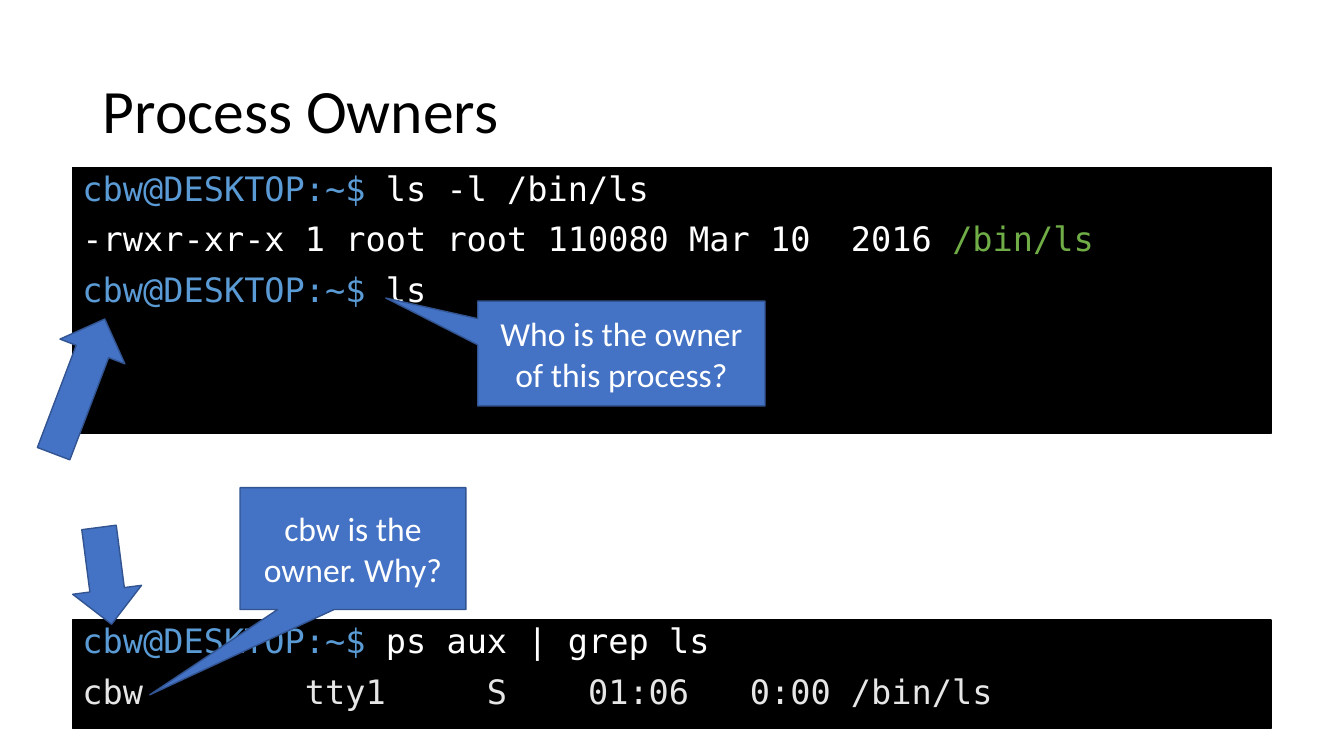
import pptx
import pptx.util
import pptx.dml.color
import pptx.enum.shapes
import pptx.enum.text

Cm = pptx.util.Cm
Pt = pptx.util.Pt
SHAPE = pptx.enum.shapes.MSO_SHAPE
ANCHOR = pptx.enum.text.MSO_ANCHOR
ALIGN = pptx.enum.text.PP_ALIGN

BLACK, WHITE, GREY = "000000", "FFFFFF", "E7E6E6"
PROMPT_BLUE, FILE_GREEN = "5B9BD5", "70AD47"
ACCENT, ACCENT_EDGE = "4472C4", "325491"
PROMPT = ("cbw@DESKTOP:~$ ", PROMPT_BLUE)


def colour(hex_code):
    return pptx.dml.color.RGBColor.from_string(hex_code)


def set_font(font, name, size):
    font.name = name
    font.size = Pt(size)


def add_title(page, text):
    box = page.shapes.add_textbox(Cm(2.34), Cm(1.02), Cm(29.21), Cm(3.68))
    frame = box.text_frame
    frame.word_wrap = True
    frame.vertical_anchor = ANCHOR.MIDDLE
    para = frame.paragraphs[0]
    para.text = text
    para.line_spacing = 0.9
    set_font(para.font, "Calibri", 44)
    para.font.color.rgb = colour(BLACK)


def add_block(page, kind, place, fill, edge):
    block = page.shapes.add_shape(kind, *[Cm(length) for length in place])
    block.shadow.inherit = False
    block.fill.solid()
    block.fill.fore_color.rgb = colour(fill)
    block.line.color.rgb = colour(edge)
    block.line.width = Pt(1)
    return block


def add_terminal(page, top, height, lines):
    place = (1.83, top, 30.2, height)
    frame = add_block(page, SHAPE.RECTANGLE, place, BLACK, BLACK).text_frame
    frame.word_wrap = True
    frame.vertical_anchor = ANCHOR.TOP
    for index, line in enumerate(lines):
        para = frame.add_paragraph() if index else frame.paragraphs[0]
        para.alignment = ALIGN.LEFT
        para.line_spacing = 0.9
        para.space_before = Pt(10)
        set_font(para.font, "DejaVu Sans Mono", 24)
        for text, hex_code in line:
            span = para.add_run()
            span.text = text
            span.font.color.rgb = colour(hex_code)


def add_callout(page, place, tip, text):
    callout = add_block(page, SHAPE.RECTANGULAR_CALLOUT, place, ACCENT, ACCENT_EDGE)
    for index, offset in enumerate(tip):
        callout.adjustments[index] = offset
    frame = callout.text_frame
    frame.word_wrap = True
    frame.vertical_anchor = ANCHOR.MIDDLE
    para = frame.paragraphs[0]
    para.text = text
    para.alignment = ALIGN.CENTER
    set_font(para.font, "Calibri", 24)
    para.font.color.rgb = colour(WHITE)


def add_arrow(page, place, rotation):
    arrow = add_block(page, SHAPE.DOWN_ARROW, place, ACCENT, ACCENT_EDGE)
    arrow.rotation = rotation


def main():
    deck = pptx.Presentation()
    deck.slide_width, deck.slide_height = Cm(33.87), Cm(19.05)
    page = deck.slides.add_slide(deck.slide_layouts[6])

    add_title(page, "Process Owners")
    add_terminal(page, 4.22, 6.71, [
        [PROMPT, ("ls -l /bin/ls", WHITE)],
        [("-rwxr-xr-x 1 root root 110080 Mar 10  2016 ", WHITE), ("/bin/ls", FILE_GREEN)],
        [PROMPT, ("ls", WHITE)],
        [("…", WHITE)],
    ])
    add_terminal(page, 15.62, 2.74, [
        [PROMPT, ("ps aux | grep ls", WHITE)],
        [("cbw        tty1     S    01:06   0:00 /bin/ls", GREY)],
    ])
    add_callout(page, (12.04, 7.59, 7.24, 2.64), (-0.82, -0.53),
                "Who is the owner of this process?")
    add_callout(page, (6.05, 12.29, 5.69, 3.07), (-0.9, 1.2),
                "cbw is the owner. Why?")
    add_arrow(page, (1.78, 13.28, 1.75, 2.46), 352.6)
    add_arrow(page, (1.12, 7.92, 1.75, 3.63), 200.8)

    deck.save("out.pptx")


if __name__ == "__main__":
    main()
